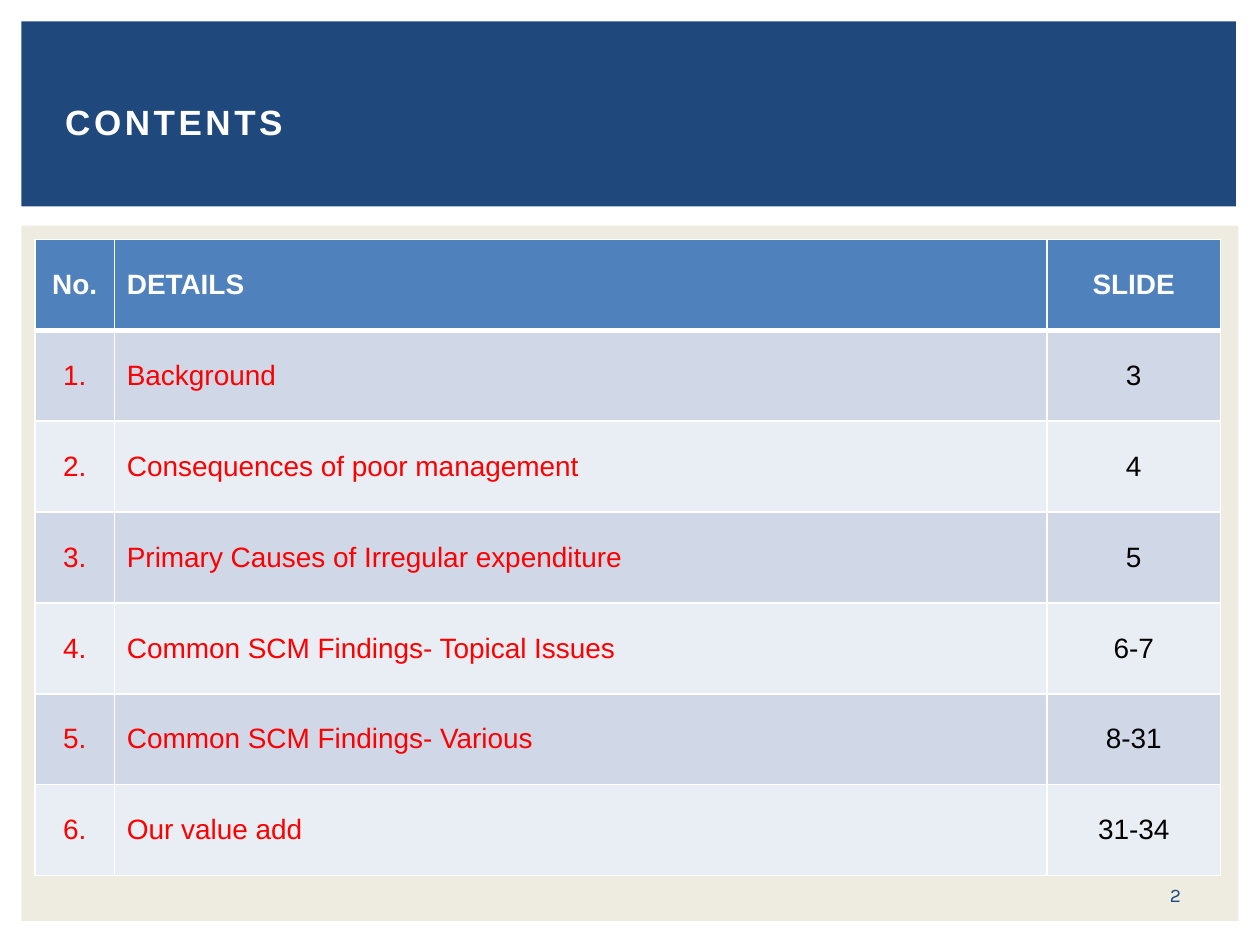
from lxml import etree
from pptx import Presentation
from pptx import util as u
from pptx.dml.color import RGBColor
from pptx.enum import shapes, text
from pptx.oxml.ns import qn

LEFT, MID = text.PP_ALIGN.LEFT, text.PP_ALIGN.CENTER
ROWS = [
    ("No.", "DETAILS", "SLIDE"),
    ("1.", "Background", "3"),
    ("2.", "Consequences of poor management", "4"),
    ("3.", "Primary Causes of Irregular expenditure", "5"),
    ("4.", "Common SCM Findings- Topical Issues", "6-7"),
    ("5.", "Common SCM Findings- Various", "8-31"),
    ("6.", "Our value add", "31-34"),
]


def paint(item, tone):
    """Set a fill or font to a solid hex colour."""
    if hasattr(item, "solid"):
        item.solid()
        item.fore_color.rgb = RGBColor.from_string(tone)
    else:
        item.color.rgb = RGBColor.from_string(tone)


def write(frame, words, size, tone, face="Arial", bold=False, align=LEFT):
    """Add one styled run to the first paragraph and return it."""
    line = frame.paragraphs[0]
    line.alignment = align
    run = line.add_run()
    run.text = words
    run.font.size, run.font.name, run.font.bold = u.Pt(size), face, bold
    paint(run.font, tone)
    return run


def panel(slide, box, tone):
    """Draw a plain filled rectangle."""
    rect = slide.shapes.add_shape(shapes.MSO_SHAPE.RECTANGLE, *map(u.Pt, box))
    rect.shadow.inherit = False
    paint(rect.fill, tone)
    rect.line.fill.background()


def label(slide, box, words, size, tone, **style):
    """Add a vertically centred text box and return its run."""
    frame = slide.shapes.add_textbox(*map(u.Pt, box)).text_frame
    frame.word_wrap = True
    frame.vertical_anchor = text.MSO_ANCHOR.MIDDLE
    return write(frame, words, size, tone, **style)


def edge(cell, widths):
    """Give a cell white borders of the widths named by side."""
    props = cell._tc.get_or_add_tcPr()
    for spot, (side, width) in enumerate(widths.items()):
        line = etree.Element(qn(f"a:ln{side}"), w=str(u.Pt(width)))
        fill = etree.SubElement(line, qn("a:solidFill"))
        etree.SubElement(fill, qn("a:srgbClr"), val="FFFFFF")
        props.insert(spot, line)


def header(slide, box):
    """Place the blue band and its spaced title."""
    x, y, w, h = box
    panel(slide, box, "1F497D")
    run = label(slide, (x + 18, y + 16, w - 34, h - 23), "CONTENTS", 20, "FFFFFF", bold=True)
    run._r.get_or_add_rPr().set("spc", "200")


def agenda(slide, box):
    """Place the contents table, with banded rows of equal height."""
    x, y, w, h = box
    grid = slide.shapes.add_table(len(ROWS), 3, *map(u.Pt, box)).table
    for col, wide in zip(grid.columns, (45.3, w - 144.6, 99.3)):
        col.width = u.Pt(wide)
    for r, row in enumerate(ROWS):
        grid.rows[r].height = u.Pt(h / len(ROWS))
        head = r == 0
        for c, words in enumerate(row):
            cell = grid.cell(r, c)
            cell.vertical_anchor = text.MSO_ANCHOR.MIDDLE
            paint(cell.fill, "4F81BD" if head else ("E9EDF4", "D0D8E8")[r % 2])
            tone = "FFFFFF" if head else ("FF0000", "FF0000", "000000")[c]
            write(cell.text_frame, words, 16, tone, bold=head, align=LEFT if c == 1 else MID)
            edge(cell, {"L": 1, "R": 1, "T": 3 if r == 1 else 1, "B": 3 if head else 1})


def body(slide, box):
    """Place the beige panel with the table and the page number."""
    x, y, w, h = box
    panel(slide, box, "EEECE1")
    agenda(slide, (x + 7.8, y + 7.9, 677.5, 363.6))
    label(slide, (x + 636.5, y + 371.5, 46, 21.6), "2", 11, "1F497D", face="Karla", align=MID)


def main():
    """Build and save the slide."""
    deck = Presentation()
    deck.slide_width, deck.slide_height = u.Pt(720), u.Pt(540)
    slide = deck.slides.add_slide(deck.slide_layouts[6])
    header(slide, (12.2, 12.2, 694, 105.8))
    body(slide, (12.2, 128.9, 695.5, 397.4))
    deck.save("out.pptx")


if __name__ == "__main__":
    main()
